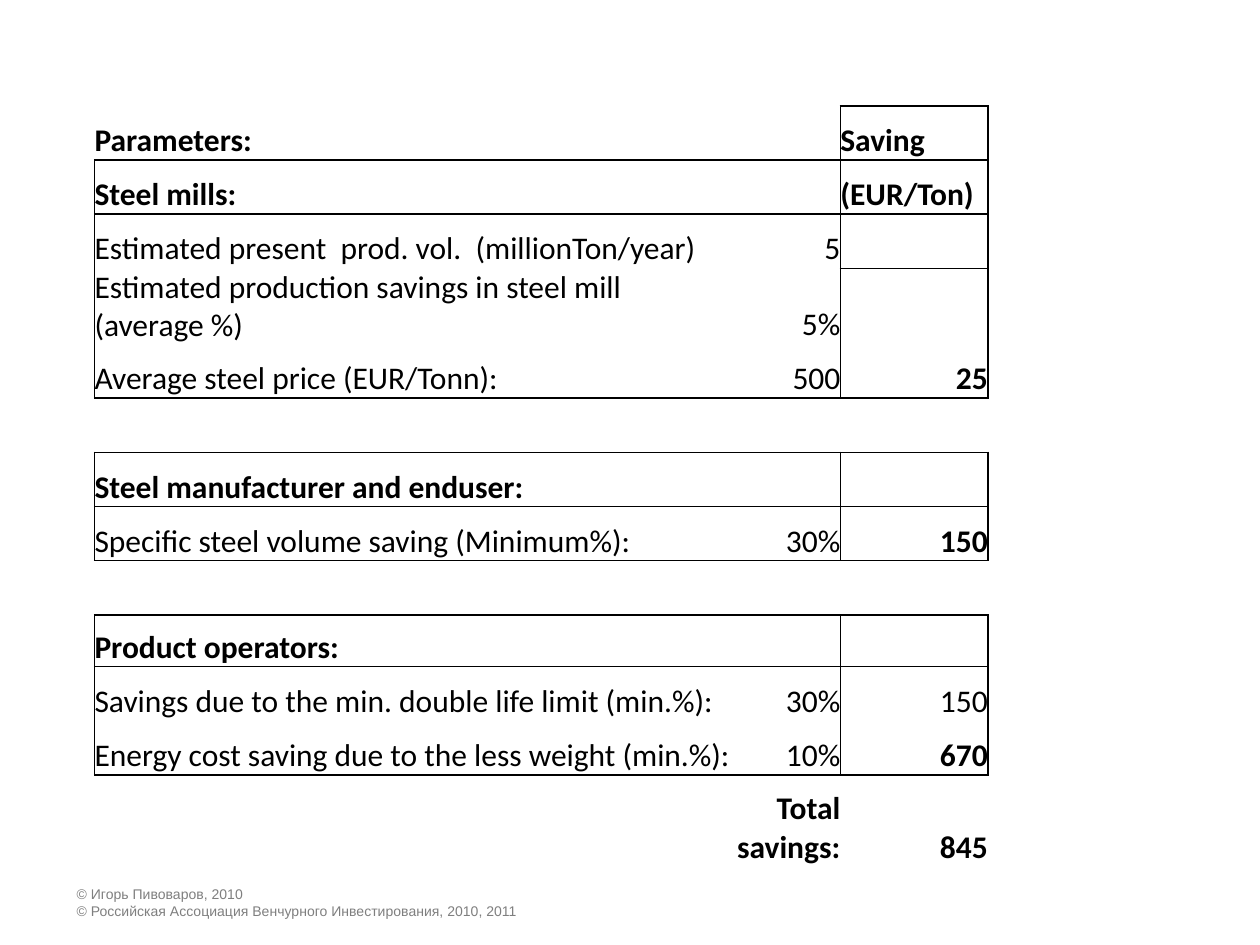
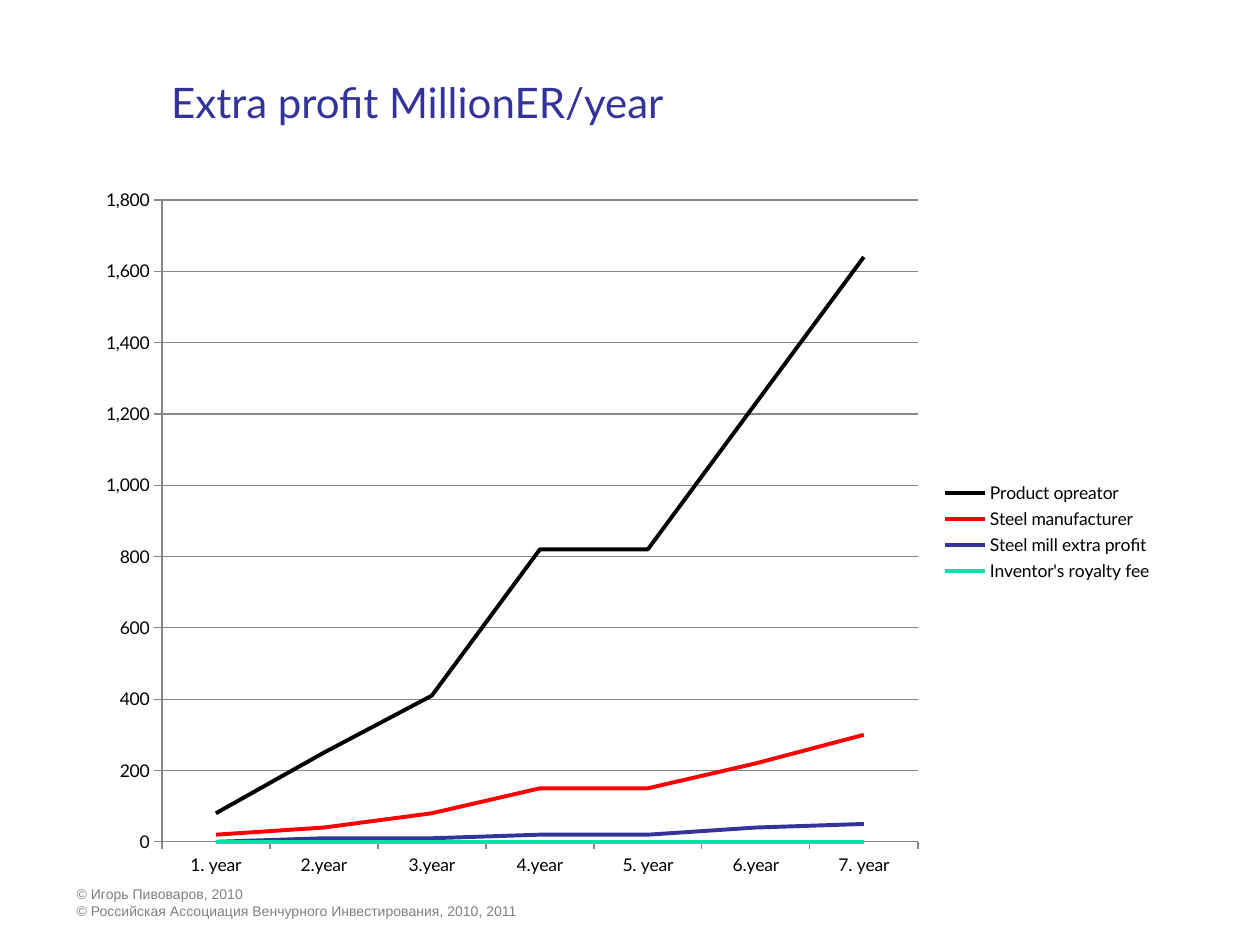
from dataclasses import dataclass

from lxml import etree
from pptx import Presentation, util as u
from pptx.chart.data import CategoryChartData
from pptx.dml.color import RGBColor
from pptx.enum import chart as ch, text as t
from pptx.oxml.ns import qn

COLORS = {"ink": "000000", "footer": "7F7F7F", "title": "333399",
          "grid": "878787", "red": "FF0000", "green": "00E4A8"}
NO_STYLE = "{2D5ABB26-0587-4C30-8999-92F81FD0307C}"
FOOTER = ("© Игорь Пивоваров, 2010\n"
          "© Российская Ассоциация Венчурного Инвестирования, 2010, 2011")


@dataclass
class TextStyle:
    font: str
    size: float
    color: str
    bold: bool = False


@dataclass
class Row:
    label: str = ""
    value: str = ""
    saving: str = ""
    bold: str = ""  # letters of the bold columns: l, v, s
    height: float = 0.43


@dataclass
class Frame:
    """A ruled rectangle around a block of table cells."""
    top: int
    bottom: int
    left: int
    right: int


@dataclass
class Series:
    name: str
    color: str
    values: tuple


FOOTER_STYLE = TextStyle("Arial", 8, "footer")
TITLE_STYLE = TextStyle("Lato", 24, "title")
CHART_STYLE = TextStyle("Lato", 10, "ink")

ROWS = [
    Row("Parameters:", "", "Saving", "ls"),
    Row("Steel mills:", "", "(EUR/Ton)", "ls"),
    Row("Estimated present  prod. vol.  (millionTon/year)", "5"),
    Row("Estimated production savings in steel mill (average %)", "5%"),
    Row("Average steel price (EUR/Tonn):", "500", "25", "s"),
    Row(),
    Row("Steel manufacturer and enduser:", bold="l"),
    Row("Specific steel volume saving (Minimum%):", "30%", "150", "s"),
    Row(),
    Row("Product operators:", bold="l", height=0.41),
    Row("Savings due to the min. double life limit (min.%):", "30%", "150"),
    Row("Energy cost saving due to the less weight (min.%):", "10%", "670", "s"),
    Row("", "Total savings:", "845", "vs", 0.73),
]
COLUMN_WIDTHS = (5.07, 0.85, 1.17)
HEADER_ROWS = 2
FRAMES = [Frame(0, 0, 2, 2), Frame(1, 1, 2, 2), Frame(1, 4, 0, 1), Frame(2, 4, 2, 2)]
FRAMES += [Frame(top, bottom, left, right)
           for top, bottom in ((6, 7), (9, 11))
           for left, right in ((0, 1), (2, 2))]

YEARS = ("1. year", "2.year", "3.year", "4.year", "5. year", "6.year", "7. year")
SERIES = [
    Series("Product opreator", "ink", (80, 250, 410, 820, 820, 1230, 1640)),
    Series("Steel manufacturer", "red", (20, 40, 80, 150, 150, 220, 300)),
    Series("Steel mill extra profit", "title", (0, 10, 10, 20, 20, 40, 50)),
    Series("Inventor's royalty fee", "green", (0, 0, 0, 0, 0, 0, 0)),
]


def rgb(name: str) -> RGBColor:
    return RGBColor.from_string(COLORS[name])


def style_font(font, style: TextStyle) -> None:
    font.name = style.font
    font.size = u.Pt(style.size)
    font.bold = style.bold
    font.color.rgb = rgb(style.color)


def write(frame, words: str, style: TextStyle, align=t.PP_ALIGN.LEFT) -> None:
    frame.text = words
    for para in frame.paragraphs:
        para.alignment = align
        style_font(para.font, style)
        for span in para.runs:
            style_font(span.font, style)


def add_text(page, place: tuple, words: str, style: TextStyle,
             anchor=t.MSO_ANCHOR.TOP, inset: float = 0.05) -> None:
    box = page.shapes.add_textbox(*map(u.Inches, place))
    frame = box.text_frame
    frame.word_wrap = True
    frame.vertical_anchor = anchor
    frame.margin_left = frame.margin_right = u.Inches(0.1)
    frame.margin_top = frame.margin_bottom = u.Inches(inset)
    write(frame, words, style)


def add_page(deck):
    page = deck.slides.add_slide(deck.slide_layouts[6])
    add_text(page, (0.51, 6.98, 4.65, 0.35), FOOTER, FOOTER_STYLE)
    return page


def cell_sides(row: int, column: int) -> list[str]:
    """Sides of a cell that lie on a frame, in schema order."""
    for frame in FRAMES:
        if frame.top <= row <= frame.bottom and frame.left <= column <= frame.right:
            edges = {"L": column == frame.left, "R": column == frame.right,
                     "T": row == frame.top, "B": row == frame.bottom}
            return [side for side, on_edge in edges.items() if on_edge]
    return []


def rule_cell(cell, sides: list[str]) -> None:
    properties = cell._tc.get_or_add_tcPr()
    for side in sides:
        line = etree.SubElement(properties, qn(f"a:ln{side}"), w=str(u.Pt(1)))
        fill = etree.SubElement(line, qn("a:solidFill"))
        etree.SubElement(fill, qn("a:srgbClr"), val=COLORS["ink"])


def add_savings_table(page) -> None:
    height = sum(row.height for row in ROWS)
    holder = page.shapes.add_table(
        len(ROWS), len(COLUMN_WIDTHS), u.Inches(0.75), u.Inches(0.84),
        u.Inches(sum(COLUMN_WIDTHS)), u.Inches(height))
    table = holder.table
    table.first_row = table.horz_banding = False
    table._tbl.tblPr.find(qn("a:tableStyleId")).text = NO_STYLE
    for column, width in zip(table.columns, COLUMN_WIDTHS):
        column.width = u.Inches(width)
    for r, row in enumerate(ROWS):
        table.rows[r].height = u.Inches(row.height)
        for c, words in enumerate((row.label, row.value, row.saving)):
            cell = table.cell(r, c)
            cell.margin_left = cell.margin_right = 0
            cell.margin_top = cell.margin_bottom = 0
            cell.vertical_anchor = t.MSO_ANCHOR.BOTTOM
            rule_cell(cell, cell_sides(r, c))
            cell.fill.background()
            is_number = c > 0 and r >= HEADER_ROWS
            style = TextStyle("Calibri", 18, "ink", "lvs"[c] in row.bold)
            write(cell.text_frame, words, style,
                  t.PP_ALIGN.RIGHT if is_number else t.PP_ALIGN.LEFT)


def style_line(line, color: str, width: float) -> None:
    line.color.rgb = rgb(color)
    line.width = u.Pt(width)


def add_profit_chart(page) -> None:
    data = CategoryChartData(number_format="#,##0")
    data.categories = YEARS
    for series in SERIES:
        data.add_series(series.name, series.values)
    place = map(u.Inches, (0.67, 1.39, 8.58, 5.67))
    chart = page.shapes.add_chart(ch.XL_CHART_TYPE.LINE, *place, data).chart
    style_font(chart.font, CHART_STYLE)
    chart.has_title = False
    chart.has_legend = True
    chart.legend.position = ch.XL_LEGEND_POSITION.RIGHT
    chart.legend.include_in_layout = False
    chart.plots[0].vary_by_categories = False

    # Axes and gridlines
    for axis in (chart.category_axis, chart.value_axis):
        axis.major_tick_mark = ch.XL_TICK_MARK.OUTSIDE
        axis.minor_tick_mark = ch.XL_TICK_MARK.NONE
        style_line(axis.format.line, "grid", 0.75)
    values = chart.value_axis
    values.minimum_scale, values.maximum_scale, values.major_unit = 0, 1800, 200
    values.tick_labels.number_format = "#,##0"
    values.tick_labels.number_format_is_linked = False
    values.has_major_gridlines = True
    style_line(values.major_gridlines.format.line, "grid", 0.75)

    # Profit lines
    for plotted, series in zip(chart.plots[0].series, SERIES):
        plotted.smooth = False
        plotted.marker.style = ch.XL_MARKER_STYLE.NONE
        style_line(plotted.format.line, series.color, 2.25)


def main() -> None:
    deck = Presentation()
    deck.slide_width, deck.slide_height = u.Inches(10), u.Inches(7.5)

    # Savings per ton
    add_savings_table(add_page(deck))

    # Extra profit by year
    page = add_page(deck)
    add_text(page, (1.26, 0, 8.52, 1.07), "Extra profit MillionER/year",
             TITLE_STYLE, t.MSO_ANCHOR.BOTTOM, 0.06)
    add_profit_chart(page)

    deck.save("out.pptx")


if __name__ == "__main__":
    main()
